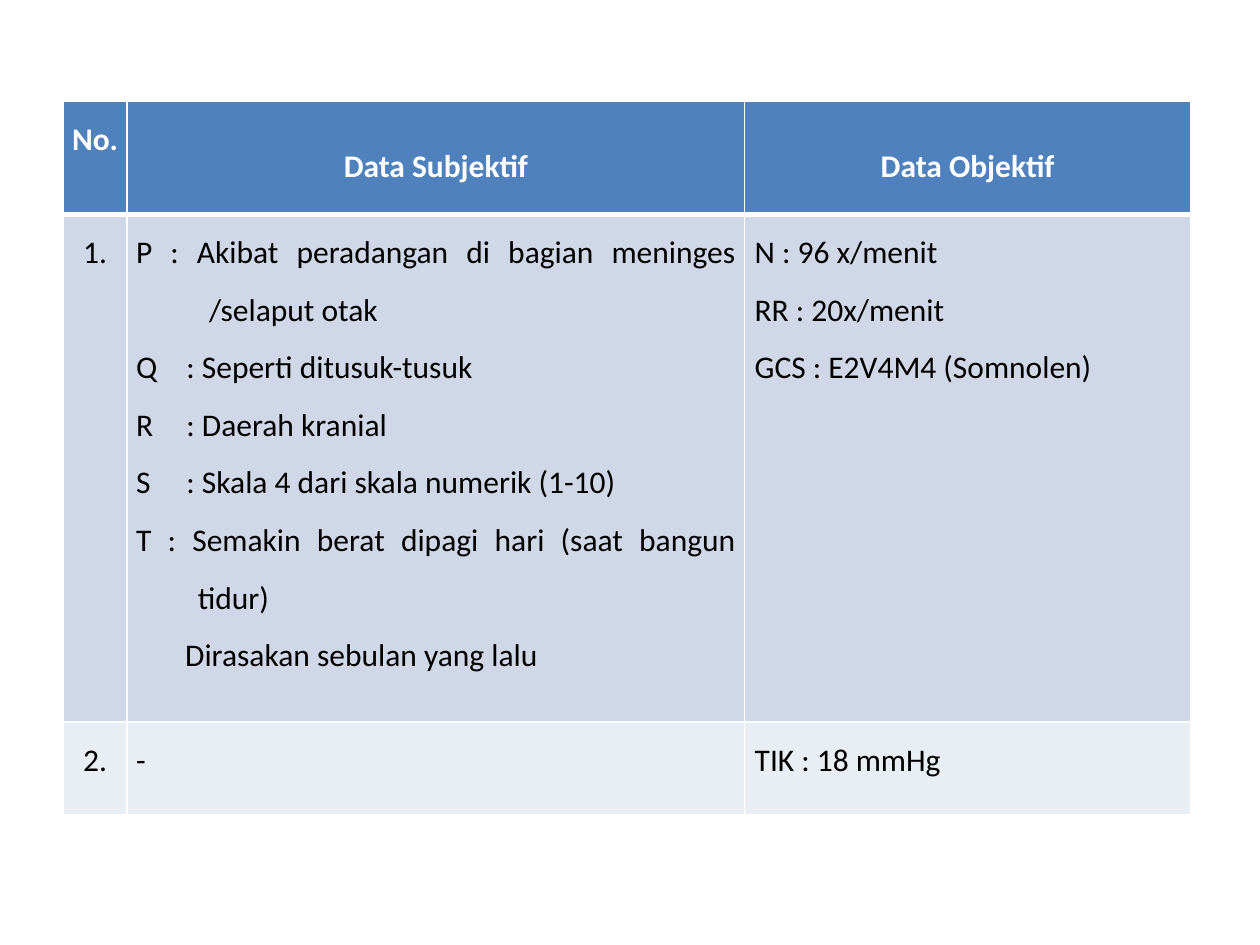
from dataclasses import dataclass

from lxml.etree import SubElement
from pptx import Presentation
from pptx.dml.color import RGBColor
from pptx.enum.text import MSO_ANCHOR as Anchor, PP_ALIGN as Align
from pptx.oxml.ns import qn
from pptx.table import _Cell as Cell
from pptx.util import Inches, Pt

COLOURS = {"header": "4F81BD", "odd": "D0D8E8", "even": "E9EDF4",
           "white": "FFFFFF", "black": "000000"}
FONT = "Calibri"
COLUMNS = (0.51, 4.9, 3.54)
ROWS = (0.9, 4.03, 0.74)


@dataclass(frozen=True)
class Line:
    text: str
    align: Align = Align.JUSTIFY
    left: float = 0
    first: float = 0


def centred(text: str) -> list[Line]:
    return [Line(text, Align.CENTER)]


def hanging(text: str, indent: float) -> Line:
    return Line(text, left=indent, first=-indent)


def objective(*texts: str) -> list[Line]:
    return [Line(text, left=0.01) for text in texts]


SUBJECTIVE = [
    hanging("P : Akibat peradangan di bagian meninges /selaput otak", 0.58),
    hanging("Q\t: Seperti ditusuk-tusuk", 0.4),
    hanging("R\t: Daerah kranial", 0.4),
    hanging("S\t: Skala 4 dari skala numerik (1-10)", 0.4),
    hanging("T : Semakin berat dipagi hari (saat bangun tidur)", 0.49),
    Line("Dirasakan sebulan yang lalu", left=0.49, first=-0.1),
]
CONTENT = [
    [centred("No."), centred("Data Subjektif"), centred("Data Objektif")],
    [centred("1."), SUBJECTIVE,
     objective("N : 96 x/menit", "RR : 20x/menit", "GCS : E2V4M4 (Somnolen)")],
    [centred("2."), [Line("-")], objective("TIK : 18 mmHg")],
]


def rgb(name: str) -> RGBColor:
    return RGBColor.from_string(COLOURS[name])


def draw_borders(cell: Cell, widths: dict[str, float]) -> None:
    properties = cell._tc.get_or_add_tcPr()
    for side, width in widths.items():
        border = SubElement(properties, qn(f"a:ln{side}"), w=str(Pt(width)))
        fill = SubElement(border, qn("a:solidFill"))
        SubElement(fill, qn("a:srgbClr"), val=COLOURS["white"])


def write_lines(cell: Cell, lines: list[Line], colour: str, bold: bool) -> None:
    frame = cell.text_frame
    for index, line in enumerate(lines):
        para = frame.add_paragraph() if index else frame.paragraphs[0]
        para.alignment = line.align
        para.line_spacing = 1.5
        properties = para._p.get_or_add_pPr()
        properties.set("marL", str(Inches(line.left)))
        properties.set("indent", str(Inches(line.first)))
        span = para.add_run()
        span.text = line.text
        span.font.name = FONT
        span.font.size = Pt(18)
        span.font.bold = bold
        span.font.color.rgb = rgb(colour)


def draw_cell(cell: Cell, lines: list[Line], row: int, column: int) -> None:
    header = row == 0
    cell.margin_left = cell.margin_right = Inches(0.07)
    cell.margin_top = cell.margin_bottom = 0
    cell.vertical_anchor = Anchor.MIDDLE if header and column else Anchor.TOP
    edge = 3 if header else 1
    draw_borders(cell, {"L": 1, "R": 1, "T": 3 if row == 1 else 1, "B": edge})
    cell.fill.solid()
    cell.fill.fore_color.rgb = rgb(("header", "odd", "even")[row])
    write_lines(cell, lines, "white" if header else "black", header)


def main() -> None:
    """Build the slide with the table of subjective and objective data."""
    deck = Presentation()
    deck.slide_width, deck.slide_height = Inches(10), Inches(7.5)
    page = deck.slides.add_slide(deck.slide_layouts[6])
    table = page.shapes.add_table(
        len(ROWS), len(COLUMNS), Inches(0.5), Inches(0.8),
        Inches(sum(COLUMNS)), Inches(sum(ROWS))).table
    for column, width in zip(table.columns, COLUMNS):
        column.width = Inches(width)
    for row, height in zip(table.rows, ROWS):
        row.height = Inches(height)
    for row, cells in enumerate(CONTENT):
        for column, lines in enumerate(cells):
            draw_cell(table.cell(row, column), lines, row, column)
    deck.save("out.pptx")


if __name__ == "__main__":
    main()
